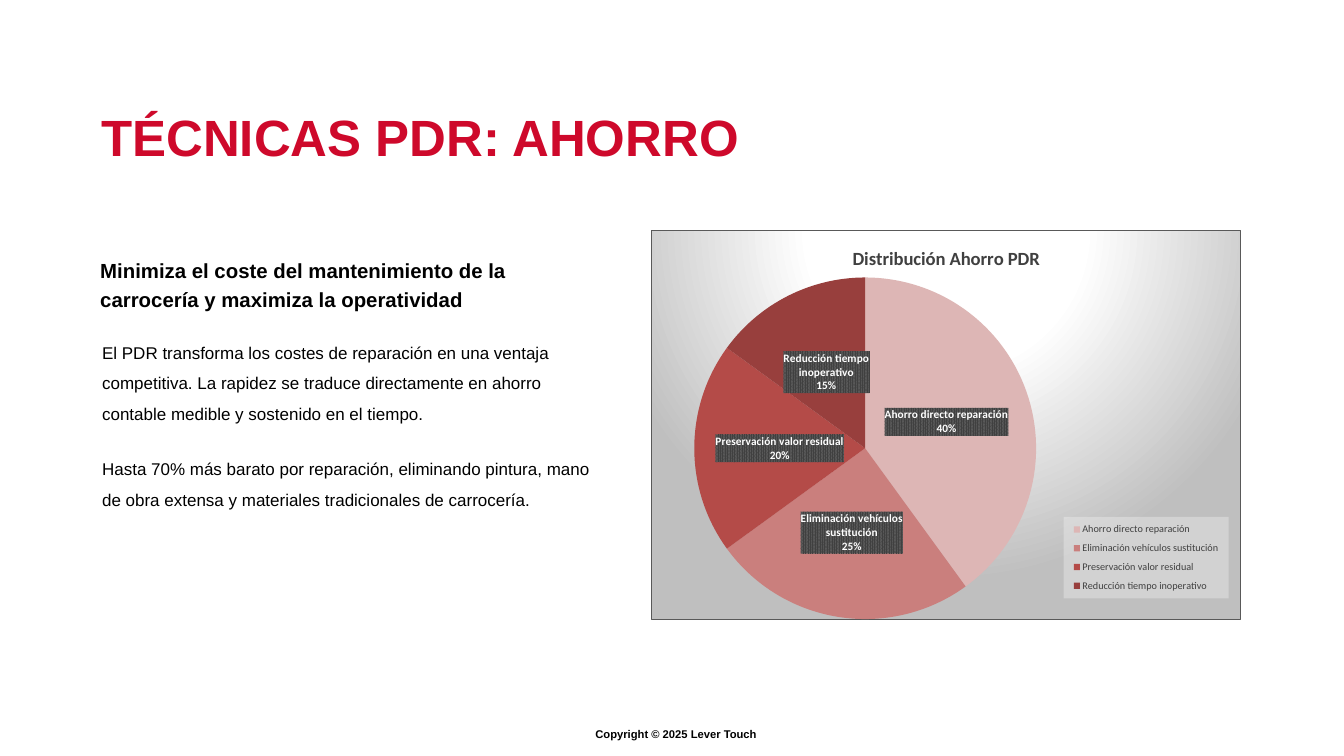
import lxml.etree
import pptx
import pptx.chart.data
import pptx.dml.color
import pptx.enum.chart
import pptx.enum.text
import pptx.oxml.ns
import pptx.util

Inches, Pt = pptx.util.Inches, pptx.util.Pt
RGBColor = pptx.dml.color.RGBColor
Align, Anchor = pptx.enum.text.PP_ALIGN, pptx.enum.text.MSO_ANCHOR
qn = pptx.oxml.ns.qn

BLACK = RGBColor(0x00, 0x00, 0x00)
WHITE = RGBColor(0xFF, 0xFF, 0xFF)
RED = RGBColor(0xCE, 0x09, 0x2B)
GRAY = RGBColor(0x40, 0x40, 0x40)
SLICE_COLORS = [RGBColor(0xDD, 0xB6, 0xB5), RGBColor(0xCA, 0x7F, 0x7D),
                RGBColor(0xB4, 0x4B, 0x48), RGBColor(0x98, 0x3F, 0x3D)]

SAVINGS = {
    "Ahorro directo reparación": 40,
    "Eliminación vehículos sustitución": 25,
    "Preservación valor residual": 20,
    "Reducción tiempo inoperativo": 15,
}

CHART_FILL = """<a:gradFill><a:gsLst>
<a:gs pos="0"><a:srgbClr val="FFFFFF"/></a:gs>
<a:gs pos="39000"><a:srgbClr val="FFFFFF"/></a:gs>
<a:gs pos="100000"><a:srgbClr val="BFBFBF"/></a:gs></a:gsLst>
<a:path path="circle"><a:fillToRect l="50000" t="-80000" r="50000" b="180000"/></a:path>
</a:gradFill><a:ln w="12700"><a:solidFill><a:srgbClr val="595959"/></a:solidFill></a:ln>"""
LABEL_FILL = """<a:pattFill prst="pct75"><a:fgClr><a:srgbClr val="404040"/></a:fgClr>
<a:bgClr><a:srgbClr val="595959"/></a:bgClr></a:pattFill><a:ln><a:noFill/></a:ln>"""
LEGEND_FILL = """<a:solidFill><a:srgbClr val="F2F2F2"><a:alpha val="39000"/></a:srgbClr>
</a:solidFill><a:ln><a:noFill/></a:ln>"""


def chart_element(tag, content):
    namespaces = pptx.oxml.ns.nsdecls("c", "a")
    return lxml.etree.fromstring(f"<c:{tag} {namespaces}>{content}</c:{tag}>")


def manual_layout(x, y, width, height, inner=False):
    """Layout element from fractions of the chart area."""
    target = '<c:layoutTarget val="inner"/>' if inner else ""
    modes = '<c:xMode val="edge"/><c:yMode val="edge"/>'
    sizes = zip("xywh", (x, y, width, height))
    values = "".join(f'<c:{name} val="{value}"/>' for name, value in sizes)
    return chart_element("layout", f"<c:manualLayout>{target}{modes}{values}</c:manualLayout>")


def remove_layout(parent):
    for layout in parent.findall(qn("c:layout")):
        parent.remove(layout)


class SlideBuilder:
    text_font = "Arial"
    chart_font = "Calibri"

    def __init__(self, presentation):
        self.slide = presentation.slides.add_slide(presentation.slide_layouts[6])
        self.slide.background.fill.solid()
        self.slide.background.fill.fore_color.rgb = WHITE

    def style(self, font, name, size, color, bold=False):
        font.name, font.size, font.bold = name, Pt(size), bold
        font.color.rgb = color

    def text(self, text, left, top, width, height, size, color=BLACK, bold=False,
             align=Align.LEFT, anchor=Anchor.MIDDLE, margins=(0, 0), spacing=1.0):
        box = self.slide.shapes.add_textbox(*map(Inches, (left, top, width, height)))
        frame = box.text_frame
        frame.word_wrap = True
        frame.vertical_anchor = anchor
        frame.margin_left = frame.margin_right = Inches(margins[0])
        frame.margin_top = frame.margin_bottom = Inches(margins[1])
        paragraph = frame.paragraphs[0]
        paragraph.text = text
        paragraph.alignment = align
        paragraph.line_spacing = spacing
        self.style(paragraph.font, self.text_font, size, color, bold)

    def pie(self, title, values, left, top, width, height):
        data = pptx.chart.data.CategoryChartData()
        data.categories = list(values)
        data.add_series(title, list(values.values()))
        chart = self.slide.shapes.add_chart(
            pptx.enum.chart.XL_CHART_TYPE.PIE,
            *map(Inches, (left, top, width, height)), data).chart
        self.style(chart.font, self.chart_font, 10, BLACK)
        chart.element.find(qn("c:chart")).addnext(chart_element("spPr", CHART_FILL))
        plot_area = chart.element.find(f"{qn('c:chart')}/{qn('c:plotArea')}")
        remove_layout(plot_area)
        plot_area.insert(0, manual_layout(0.008, 0.12, 0.709, 0.878, inner=True))

        chart.has_title = True
        paragraph = chart.chart_title.text_frame.paragraphs[0]
        paragraph.text = title
        self.style(paragraph.font, self.chart_font, 22, GRAY, bold=True)

        chart.plots[0].vary_by_categories = True
        series = chart.plots[0].series[0]
        for index, color in enumerate(SLICE_COLORS):
            fill = series.points[index].format.fill
            fill.solid()
            fill.fore_color.rgb = color
        self.pie_labels(series.data_labels)
        self.pie_legend(chart)

    def pie_labels(self, labels):
        labels.show_value = False
        labels.show_category_name = labels.show_percentage = True
        labels.position = pptx.enum.chart.XL_LABEL_POSITION.CENTER
        self.style(labels.font, self.chart_font, 13.3, WHITE, bold=True)
        text_properties = labels._element.find(qn("c:txPr"))
        text_properties.addprevious(chart_element("spPr", LABEL_FILL))

    def pie_legend(self, chart):
        chart.has_legend = True
        legend = chart.legend
        legend.position = pptx.enum.chart.XL_LEGEND_POSITION.RIGHT
        legend.include_in_layout = False
        self.style(legend.font, self.chart_font, 12, GRAY)
        element = chart.element.find(f"{qn('c:chart')}/{qn('c:legend')}")
        remove_layout(element)
        overlay = element.find(qn("c:overlay"))
        overlay.addprevious(manual_layout(0.7, 0.735, 0.28, 0.21))
        overlay.addnext(chart_element("spPr", LEGEND_FILL))


def main():
    presentation = pptx.Presentation()
    presentation.slide_width = Inches(21.99)
    presentation.slide_height = Inches(12.37)
    builder = SlideBuilder(presentation)
    builder.text("Copyright © 2025 Lever Touch", 9.63, 11.85, 2.86, 0.32, 13.2, bold=True,
                 align=Align.CENTER, anchor=Anchor.TOP, margins=(0.08, 0.05))
    builder.text("TÉCNICAS PDR: AHORRO", 1.58, 1.68, 17.67, 1.11, 60, RED, bold=True,
                 anchor=Anchor.TOP, margins=(0.08, 0.05))
    builder.text("Minimiza el coste del mantenimiento de la carrocería y maximiza "
                 "la operatividad", 1.64, 4.22, 8.02, 0.81, 24, bold=True, spacing=1.2)
    builder.text("El PDR transforma los costes de reparación en una ventaja competitiva. "
                 "La rapidez se traduce directamente en ahorro contable medible y sostenido "
                 "en el tiempo.", 1.67, 5.52, 7.99, 1.33, 20, spacing=1.5)
    builder.text("Hasta 70% más barato por reparación, eliminando pintura, mano de obra "
                 "extensa y materiales tradicionales de carrocería.",
                 1.67, 7.34, 7.99, 1, 20, spacing=1.5)
    builder.pie("Distribución Ahorro PDR", SAVINGS, 10.66, 3.77, 9.64, 6.38)
    presentation.save("out.pptx")


if __name__ == "__main__":
    main()
